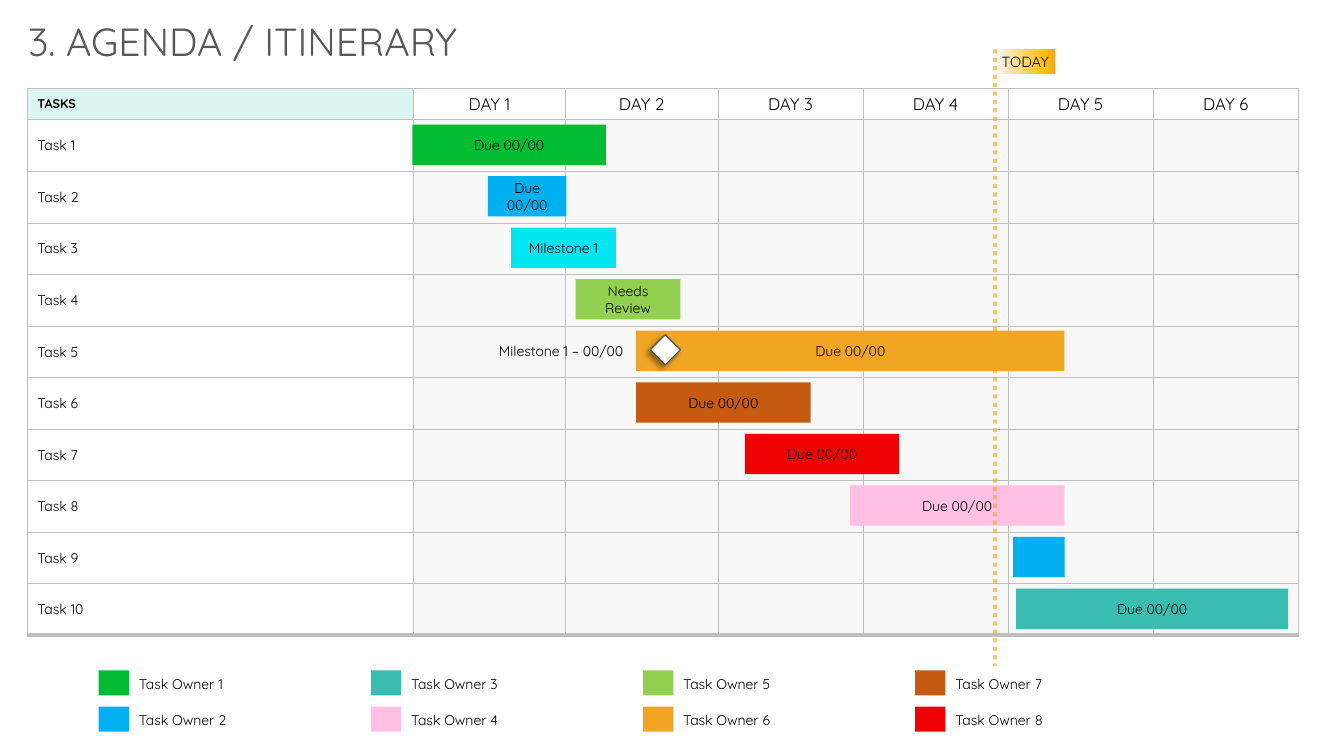
"""Builds a six-day agenda slide: a Gantt table with task bars, a legend and a today marker."""
from copy import deepcopy

from lxml import etree
from pptx import Presentation
from pptx import util as u
from pptx.dml.color import RGBColor
from pptx.enum import dml, shapes, text
from pptx.oxml.ns import qn

BLACK = RGBColor(0x00, 0x00, 0x00)
WHITE = RGBColor(0xFF, 0xFF, 0xFF)
GREY = RGBColor(0x59, 0x59, 0x59)
GRID = RGBColor(0xBF, 0xBF, 0xBF)
PALE = RGBColor(0xF2, 0xF2, 0xF2)
MINT = RGBColor(0xDC, 0xF4, 0xF2)
GREEN = RGBColor(0x00, 0xBD, 0x32)
BLUE = RGBColor(0x00, 0xB0, 0xF0)
CYAN = RGBColor(0x00, 0xE7, 0xF2)
LIME = RGBColor(0x92, 0xD0, 0x50)
ORANGE = RGBColor(0xF0, 0xA6, 0x22)
BROWN = RGBColor(0xC5, 0x5A, 0x11)
RED = RGBColor(0xF1, 0x00, 0x02)
PINK = RGBColor(0xFF, 0xC0, 0xE3)
TEAL = RGBColor(0x39, 0xBD, 0xB0)
ICE = RGBColor(0xF6, 0xF8, 0xFC)
GOLD = RGBColor(0xFF, 0xC0, 0x00)

LEFT, CENTER, RIGHT = text.PP_ALIGN.LEFT, text.PP_ALIGN.CENTER, text.PP_ALIGN.RIGHT
TOP, MIDDLE = text.MSO_ANCHOR.TOP, text.MSO_ANCHOR.MIDDLE
RECT, DIAMOND = shapes.MSO_SHAPE.RECTANGLE, shapes.MSO_SHAPE.DIAMOND

prs = Presentation()
prs.slide_width, prs.slide_height = u.Inches(13.333), u.Inches(7.5)
X, Y = prs.slide_width / 100, prs.slide_height / 100
s = prs.slides.add_slide(prs.slide_layouts[6])


def sub(parent, tag, **attrs):
    return etree.SubElement(parent, qn("a:" + tag), {k: str(v) for k, v in attrs.items()})


def write(tf, words, size, align=LEFT, color=BLACK, bold=False):
    p = tf.paragraphs[0]
    p.alignment = align
    r = p.add_run()
    r.text = words
    r.font.color.rgb = color
    for key, value in {"name": "Quicksand", "size": u.Pt(size), "bold": bold}.items():
        setattr(r.font, key, value)


COLS = [28.73] + [11.33] * 2 + [10.8] * 4
TABLE_X, TABLE_Y, HEAD_H, ROW_H, TASKS = 2.03, 11.73, 4.07, 6.82, 10
frame = s.shapes.add_table(TASKS + 1, len(COLS), int(TABLE_X * X), int(TABLE_Y * Y),
                           int(sum(COLS) * X), int((HEAD_H + TASKS * ROW_H) * Y))
tbl = frame.table
for col, share in zip(tbl.columns, COLS):
    col.width = int(share * X)
for i, row in enumerate(tbl.rows):
    row.height = int((ROW_H if i else HEAD_H) * Y)
    for j, cell in enumerate(row.cells):
        cell.vertical_anchor = MIDDLE
        tcPr = cell._tc.get_or_add_tcPr()
        for side in "LRTB":
            width = 3 if side == "B" and i == TASKS else 0.5
            ln = sub(tcPr, "ln" + side, w=u.Pt(width))
            sub(sub(ln, "solidFill"), "srgbClr", val=GRID)
        cell.fill.solid()
        if j == 0:
            cell.fill.fore_color.rgb = WHITE if i else MINT
            write(cell.text_frame, f"Task {i}" if i else "TASKS", 10 if i else 9, bold=not i)
            continue
        cell.fill.fore_color.rgb = PALE if i else WHITE
        clr = tcPr.find(qn("a:solidFill")).find(qn("a:srgbClr"))
        sub(clr, "alpha", val=50000 if i else 75000)
        if i == 0:
            write(cell.text_frame, f"DAY {j}", 12, CENTER)

BARS = [
    (30.68, 14.4, GREEN, "Due 00/00"),
    (36.3, 5.85, BLUE, "Due 00/00"),
    (38.03, 7.8, CYAN, "Milestone 1"),
    (42.83, 7.8, LIME, "Needs Review"),
    (47.33, 31.88, ORANGE, "Due 00/00"),
    (47.33, 12.98, BROWN, "Due 00/00"),
    (55.43, 11.48, RED, "Due 00/00"),
    (63.23, 15.98, PINK, "Due 00/00"),
    (75.38, 3.83, BLUE, ""),
    (75.6, 20.25, TEAL, "Due 00/00"),
]
OWNERS = [GREEN, BLUE, TEAL, PINK, LIME, ORANGE, BROWN, RED]
BAR_Y, BAR_H, SWATCH_W, SWATCH_H = TABLE_Y + HEAD_H + 0.67, 5.33, 2.25, 3.33
MILESTONE_Y = BAR_Y + 4 * ROW_H
TODAY_X, TODAY_Y = 74.03, 6.53

items = [(None, 1.35, 1.6, 97.13, 7.6, None, "3. AGENDA / ITINERARY", 28, LEFT, TOP, GREY)]
for i, (x, w, color, words) in enumerate(BARS):
    items.append((RECT, x, BAR_Y + i * ROW_H, w, BAR_H, color, words, 10, CENTER, MIDDLE, BLACK))
for i, color in enumerate(OWNERS):
    x, y = 7.35 + i // 2 * 20.25, 88.67 + i % 2 * 4.8
    items += [
        (RECT, x, y, SWATCH_W, SWATCH_H, color, "", 10, CENTER, MIDDLE, BLACK),
        (None, x + SWATCH_W, y, 18, SWATCH_H, None, f"Task Owner {i + 1}", 10, LEFT, TOP, BLACK),
    ]
items += [
    (None, 30.83, MILESTONE_Y, 16.28, BAR_H, None, "Milestone 1 – 00/00", 10, RIGHT, MIDDLE, BLACK),
    (RECT, TODAY_X, TODAY_Y, 4.5, SWATCH_H, GOLD, "TODAY", 10.5, CENTER, MIDDLE, BLACK),
    (DIAMOND, 48.38, MILESTONE_Y + 0.53, 2.25, 4, WHITE, "", 10, CENTER, MIDDLE, BLACK),
]
for kind, x, y, w, h, fill, words, size, align, anchor, color in items:
    place = int(x * X), int(y * Y), int(w * X), int(h * Y)
    if kind is None:
        sp = s.shapes.add_textbox(*place)
    else:
        sp = s.shapes.add_shape(kind, *place)
        sp.shadow.inherit = False
        sp.fill.solid()
        sp.fill.fore_color.rgb = fill
        sp.line.fill.background()
    tf = sp.text_frame
    tf.word_wrap, tf.vertical_anchor = True, anchor
    if words:
        write(tf, words, size, align, color)

today, diamond = list(s.shapes)[-2:]
for side in ("left", "right", "top", "bottom"):
    setattr(today.text_frame, "margin_" + side, 0)
today.fill.gradient()
today.fill.gradient_angle = 0
stops = today._element.spPr.find(qn("a:gradFill")).find(qn("a:gsLst"))
stops.append(deepcopy(stops[-1]))
for stop, (position, color) in zip(today.fill.gradient_stops, [(0, ICE), (0.83, GOLD), (1, ORANGE)]):
    stop.position, stop.color.rgb = position, color

diamond.line.color.rgb, diamond.line.width = GREY, u.Pt(1)
shadow = sub(diamond._element.spPr.find(qn("a:effectLst")), "outerShdw",
             blurRad=u.Pt(4), dist=u.Pt(3), dir=135 * 60000, algn="tr", rotWithShape=0)
sub(sub(shadow, "srgbClr", val=BLACK), "alpha", val=40000)

marker = s.shapes.add_connector(shapes.MSO_CONNECTOR.STRAIGHT, int(TODAY_X * X), int(TODAY_Y * Y),
                                int(TODAY_X * X), int(88.13 * Y))
marker.line.color.rgb, marker.line.width = ORANGE, u.Pt(3)
marker.line.dash_style = dml.MSO_LINE.ROUND_DOT
spPr = marker._element.spPr
sub(next(spPr.iter(qn("a:srgbClr"))), "alpha", val=60000)
sub(spPr, "effectLst")

prs.save("out.pptx")
